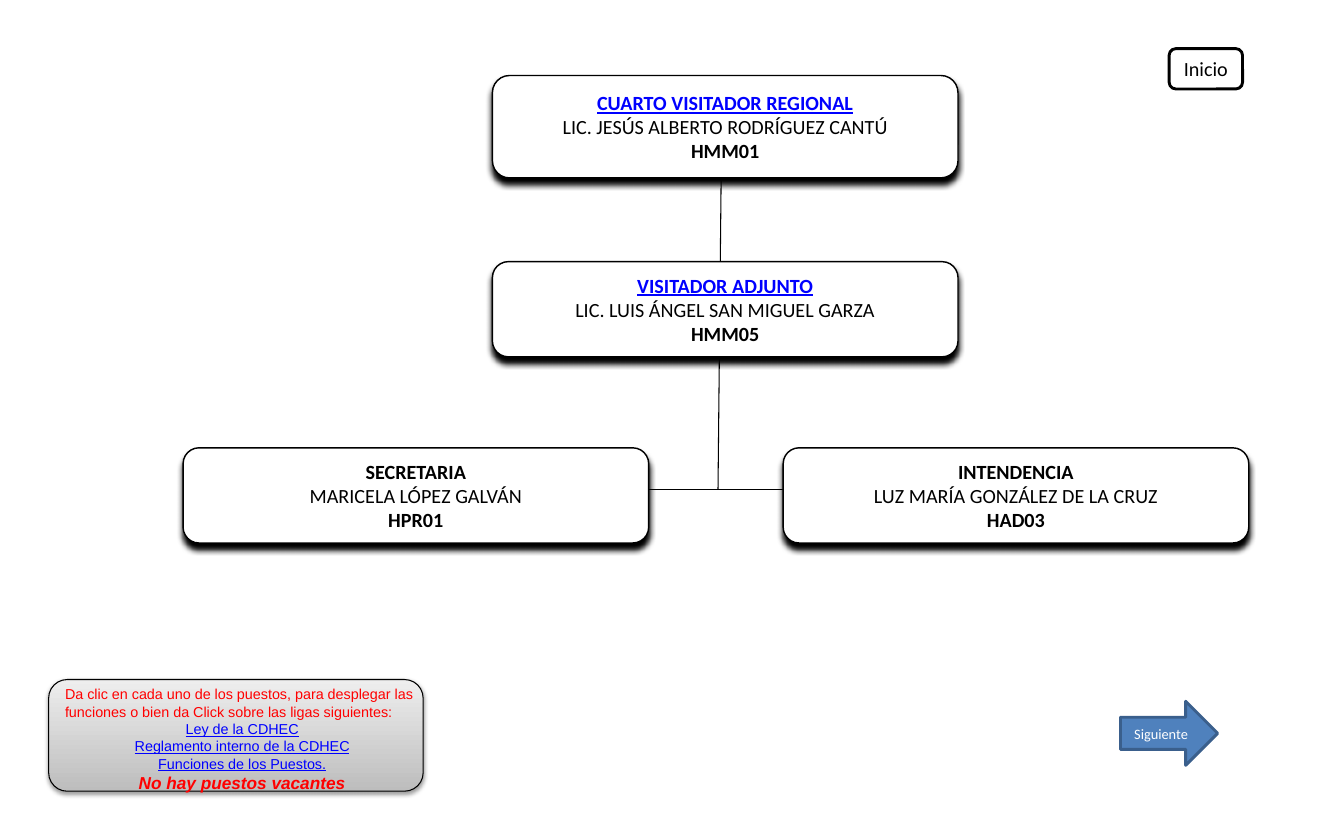
from lxml import etree
from pptx import Presentation
from pptx.dml.color import RGBColor
from pptx.enum.shapes import MSO_CONNECTOR, MSO_SHAPE
from pptx.enum.text import MSO_ANCHOR, PP_ALIGN
from pptx.oxml.ns import qn
from pptx.util import Inches, Pt

ROUNDED, ARROW = MSO_SHAPE.ROUNDED_RECTANGLE, MSO_SHAPE.RIGHT_ARROW
STRAIGHT = MSO_CONNECTOR.STRAIGHT
LEFT, CENTER = PP_ALIGN.LEFT, PP_ALIGN.CENTER
MIDDLE, TOP = MSO_ANCHOR.MIDDLE, MSO_ANCHOR.TOP

COLORS = {
    "white": "FFFFFF", "black": "000000", "link": "0000FF", "red": "FF0000",
    "blue": "4F81BD", "navy": "3A5F8C", "silver": "BDBDBD", "mist": "EEEEEE",
}

# Chart grid in inches
COLUMNS = {"left": 1.77, "center": 4.76, "right": 7.57}
FIRST_ROW, ROW_STEP, POST_WIDTH = 0.73, 1.8, 4.5

# Column, row, height, post, holder, code, is the post a link
POSTS = [
    ("center", 0, 0.99, "CUARTO VISITADOR REGIONAL",
     "LIC. JESÚS ALBERTO RODRÍGUEZ CANTÚ", "HMM01", True),
    ("center", 1, 0.92, "VISITADOR ADJUNTO",
     "LIC. LUIS ÁNGEL SAN MIGUEL GARZA", "HMM05", True),
    ("left", 2, 0.92, "SECRETARIA", "MARICELA LÓPEZ GALVÁN", "HPR01", False),
    ("right", 2, 0.92, "INTENDENCIA",
     "LUZ MARÍA GONZÁLEZ DE LA CRUZ", "HAD03", False),
]
BRANCHES = [(6.97, 1.75, 6.94, 4.73), (5.79, 4.73, 8.09, 4.73)]
NOTE = ("Da clic en cada uno de los puestos, para desplegar las funciones "
        "o bien da Click sobre las ligas siguientes:")
NOTE_LINKS = ["Ley de la CDHEC", "Reglamento interno de la CDHEC",
              "Funciones de los Puestos."]


def color(name):
    return RGBColor.from_string(COLORS[name])


def add_panel(page, kind, place, fill, line, width):
    panel = page.shapes.add_shape(kind, *map(Inches, place))
    panel.shadow.inherit = False
    panel.fill.solid()
    panel.fill.fore_color.rgb = color(fill)
    panel.line.color.rgb = color(line)
    panel.line.width = Pt(width)
    return panel


def add_shadow(panel, opacity, blur, distance):
    effects = panel._element.spPr.find(qn("a:effectLst"))
    shadow = etree.SubElement(
        effects, qn("a:outerShdw"), blurRad=str(Pt(blur)),
        dist=str(Pt(distance)), dir="5400000", algn="ctr", rotWithShape="0")
    tint = etree.SubElement(shadow, qn("a:srgbClr"), val=COLORS["black"])
    etree.SubElement(tint, qn("a:alpha"), val=str(opacity * 1000))


def write(box, lines, font, anchor=MIDDLE, wrap=False):
    """Each line is text, size, color name, alignment and a set of styles."""
    frame = box.text_frame
    frame.word_wrap = wrap
    frame.vertical_anchor = anchor
    for index, (text, size, ink, align, styles) in enumerate(lines):
        para = frame.add_paragraph() if index else frame.paragraphs[0]
        para.text, para.alignment = text, align
        para.font.name, para.font.size = font, Pt(size)
        para.font.color.rgb = color(ink)
        para.font.bold = "bold" in styles
        para.font.italic = "italic" in styles
        para.font.underline = "underline" in styles


def add_branch(page, ends):
    branch = page.shapes.add_connector(STRAIGHT, *map(Inches, ends))
    branch.line.color.rgb = color("black")
    branch.line.width = Pt(0.75)
    etree.SubElement(branch._element.spPr, qn("a:effectLst"))


def add_post(page, column, row, height, post, holder, code, linked):
    place = (COLUMNS[column], FIRST_ROW + row * ROW_STEP, POST_WIDTH, height)
    box = add_panel(page, ROUNDED, place, "white", "black", 1)
    add_shadow(box, 100, 4, 4)
    ink, styles = ("link", {"bold", "underline"}) if linked else ("black", {"bold"})
    write(box, [(post, 14, ink, CENTER, styles),
                (holder, 14, "black", CENTER, set()),
                (code, 14, "black", CENTER, {"bold"})], "Calibri")


def add_button(page, kind, place, label, size, fill, line, ink):
    button = add_panel(page, kind, place, fill, line, 2)
    write(button, [(label, size, ink, CENTER, set())], "Calibri")


def add_note(page):
    panel = add_panel(page, ROUNDED, (0.47, 6.57, 3.62, 1.08),
                      "silver", "black", 0.75)
    panel.fill.gradient()
    panel.fill.gradient_angle = 90
    for stop, name in zip(panel.fill.gradient_stops, ("silver", "mist")):
        stop.color.rgb = color(name)
    add_shadow(panel, 38, 3.1, 1.6)

    box = page.shapes.add_textbox(*map(Inches, (0.53, 6.58, 3.62, 1.14)))
    lines = [(NOTE, 10, "red", LEFT, set())]
    lines += [(link, 10, "link", CENTER, {"underline"}) for link in NOTE_LINKS]
    lines.append(("No hay puestos vacantes", 12, "red", CENTER, {"bold", "italic"}))
    write(box, lines, "Arial", TOP, True)


def main():
    deck = Presentation()
    deck.slide_width, deck.slide_height = Inches(12.99), Inches(7.88)
    page = deck.slides.add_slide(deck.slide_layouts[6])

    # Organisation chart, with the branches behind the posts
    for ends in BRANCHES:
        add_branch(page, ends)
    for post in POSTS:
        add_post(page, *post)

    # Note and navigation
    add_note(page)
    add_button(page, ROUNDED, (11.3, 0.47, 0.71, 0.39),
               "Inicio", 14, "white", "black", "black")
    add_button(page, ARROW, (10.83, 6.78, 0.94, 0.62),
               "Siguiente", 10, "blue", "navy", "white")
    deck.save("out.pptx")


if __name__ == "__main__":
    main()
